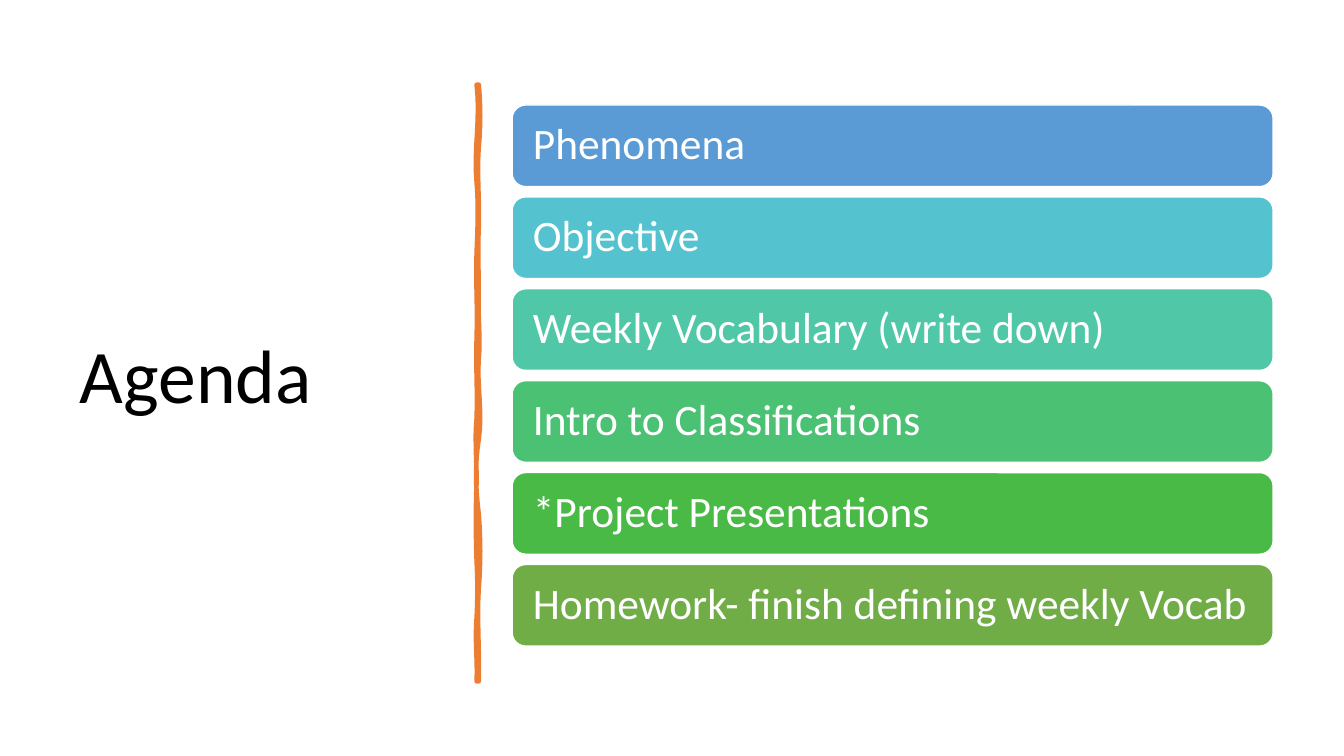
from dataclasses import dataclass

from lxml import etree
from pptx import Presentation
from pptx.dml.color import RGBColor
from pptx.enum.shapes import MSO_SHAPE
from pptx.enum.text import MSO_ANCHOR, PP_ALIGN
from pptx.oxml.ns import qn
from pptx.util import Pt

ROUNDED = MSO_SHAPE.ROUNDED_RECTANGLE
MIDDLE = MSO_ANCHOR.MIDDLE
LEFT = PP_ALIGN.LEFT


@dataclass(frozen=True)
class Theme:
    font: str = "Calibri"
    title_size: float = 54
    item_size: float = 31
    title_color: str = "000000"
    item_color: str = "FFFFFF"
    bar_outline: str = "FFFFFF"
    divider: str = "ED7D31"
    bars: tuple = ("5B9BD5", "55C3CF", "50C8A7", "4BC174", "4ABA46", "70AD47")


THEME = Theme()
AGENDA = (
    "Phenomena",
    "Objective",
    "Weekly Vocabulary (write down)",
    "Intro to Classifications",
    "*Project Presentations",
    "Homework- finish defining weekly Vocab",
)
BAR_LEFT, BAR_TOP, BAR_WIDTH, BAR_HEIGHT = 365.8, 75, 543.6, 58.3
BAR_PITCH = 65.64
BAR_INSET = 12
CURVE_STEPS = 8

DIVIDER_TOP = 60.5
RIGHT_EDGE_X, LEFT_EDGE_X = 342, 340.5
RIGHT_EDGE = (
    (105.1, 1.4, 1.4), (162.7, -1.4, 0.7), (211.7, -0.7, 0), (256.3, -0.7, 1.4),
    (313.9, -1.4, 2.9), (367.2, -2.9, -2.2), (420.5, 1.4, 1.4), (486.7, -1.4, 0.7),
)
LEFT_EDGE = (
    (441.4, 0.7, -1.4), (401, 0.7, 0.7), (343.4, -0.7, -0.7), (298.8, 0, -1.4),
    (241.2, 0.7, -0.7), (180, 0.7, -0.7), (130.3, 0.7, 1.4), (60.5, -2.2, 2.9),
)


def color(value):
    return RGBColor.from_string(value)


def write_text(shape, text, size, text_color):
    frame = shape.text_frame
    frame.word_wrap = True
    frame.vertical_anchor = MIDDLE
    paragraph = frame.paragraphs[0]
    paragraph.text = text
    paragraph.alignment = LEFT
    paragraph.line_spacing = 0.9
    paragraph.font.name = THEME.font
    paragraph.font.size = Pt(size)
    paragraph.font.color.rgb = color(text_color)


def paint(shape, fill, outline, width):
    shape.shadow.inherit = False
    shape.fill.solid()
    shape.fill.fore_color.rgb = color(fill)
    shape.line.color.rgb = color(outline)
    shape.line.width = Pt(width)


def add_title(slide, text):
    title = slide.shapes.add_textbox(Pt(50), Pt(50.4), Pt(269), Pt(440))
    write_text(title, text, THEME.title_size, THEME.title_color)


def wavy_edge(x, start_y, waves):
    points = []
    for end_y, first_bow, second_bow in waves:
        for step in range(1, CURVE_STEPS + 1):
            t = step / CURVE_STEPS
            bow = 3 * t * (1 - t) * ((1 - t) * first_bow + t * second_bow)
            points.append((Pt(x + bow), Pt(start_y + t * (end_y - start_y))))
        start_y = end_y
    return points


def add_divider(slide):
    bottom = RIGHT_EDGE[-1][0]
    builder = slide.shapes.build_freeform(Pt(RIGHT_EDGE_X), Pt(DIVIDER_TOP))
    builder.add_line_segments(
        wavy_edge(RIGHT_EDGE_X, DIVIDER_TOP, RIGHT_EDGE)
        + [(Pt(LEFT_EDGE_X), Pt(bottom))]
        + wavy_edge(LEFT_EDGE_X, bottom, LEFT_EDGE)
    )
    divider = builder.convert_to_shape()
    paint(divider, THEME.divider, THEME.divider, 3.25)
    outline = divider.element.spPr.find(qn("a:ln"))
    etree.SubElement(outline, qn("a:round"))


def add_bar(slide, index, text, fill):
    bar = slide.shapes.add_shape(
        ROUNDED, Pt(BAR_LEFT), Pt(BAR_TOP + index * BAR_PITCH), Pt(BAR_WIDTH), Pt(BAR_HEIGHT)
    )
    paint(bar, fill, THEME.bar_outline, 1)
    write_text(bar, text, THEME.item_size, THEME.item_color)
    frame = bar.text_frame
    frame.margin_left = frame.margin_right = Pt(BAR_INSET)


def main():
    presentation = Presentation()
    presentation.slide_width = Pt(960)
    presentation.slide_height = Pt(540)
    slide = presentation.slides.add_slide(presentation.slide_layouts[6])
    add_title(slide, "Agenda")
    add_divider(slide)
    for index, (text, fill) in enumerate(zip(AGENDA, THEME.bars)):
        add_bar(slide, index, text, fill)
    presentation.save("out.pptx")


if __name__ == "__main__":
    main()
